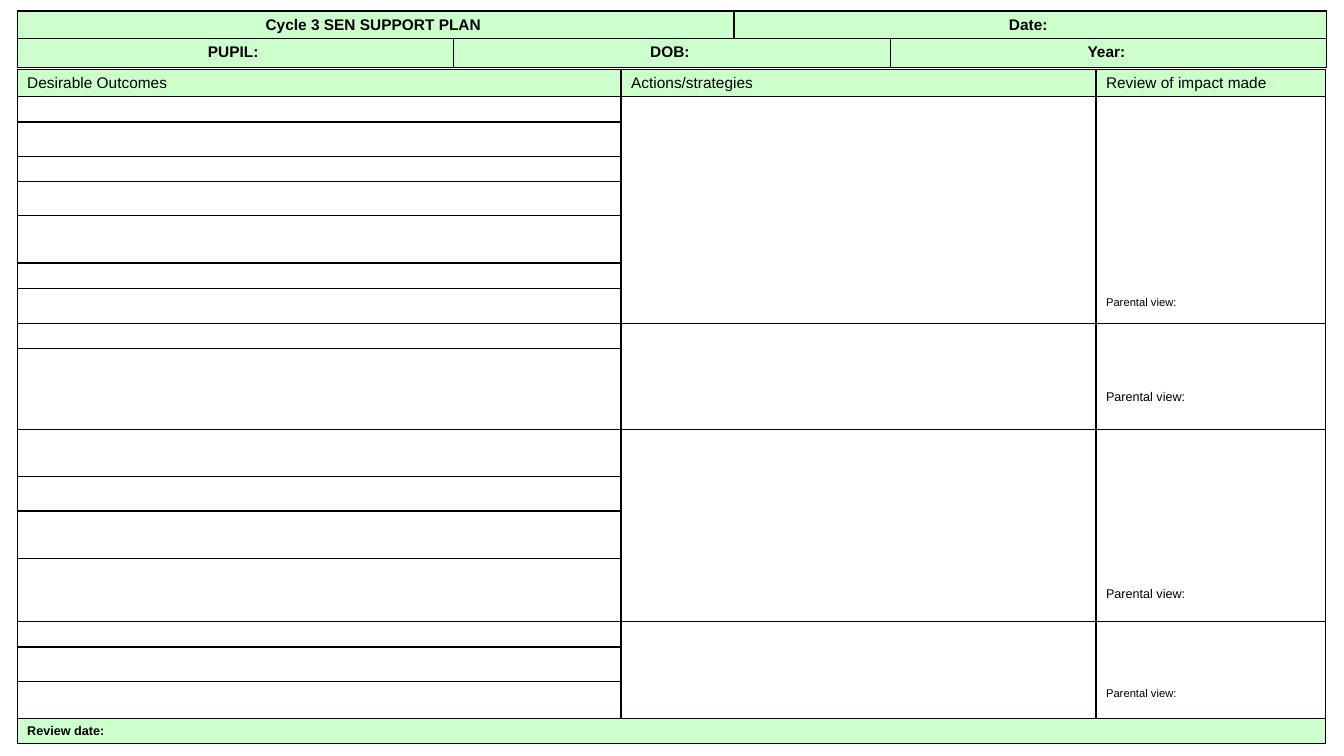
from dataclasses import dataclass

from pptx import Presentation
from pptx import util as u
from pptx.dml.color import RGBColor
from pptx.enum import text
from pptx.oxml import parse_xml
from pptx.oxml.ns import nsdecls
from pptx.slide import Slide
from pptx.table import Table, _Cell

GREEN, WHITE, BLACK = "CCFFCC", "FFFFFF", "000000"
LEFT = 0.17


@dataclass
class Label:
    row: int
    col: int
    words: str
    size: float = 11
    bold: bool = False
    centred: bool = False
    rows: int = 1
    cols: int = 1
    fill: str = GREEN
    gap_below: float | None = None  # inches from the cell's bottom edge


@dataclass
class Goal:
    """Consecutive outcome rows that share one actions cell and one review cell."""
    rows: int
    view_size: float
    gap_below: float


def colour(value: str) -> RGBColor:
    return RGBColor.from_string(value)


def style_cell(cell: _Cell) -> None:
    """Black borders, white fill and small type while the cell is empty."""
    properties = cell._tc.get_or_add_tcPr()
    for side in "LRTB":
        properties.append(parse_xml(
            f'<a:ln{side} {nsdecls("a")} w="{u.Pt(1)}"><a:solidFill>'
            f'<a:srgbClr val="{BLACK}"/></a:solidFill></a:ln{side}>'))
    cell.fill.solid()
    cell.fill.fore_color.rgb = colour(WHITE)
    cell.text_frame.paragraphs[0]._p.append(
        parse_xml(f'<a:endParaRPr {nsdecls("a")} sz="800"/>'))


def add_grid(slide: Slide, top: float, widths: list[float], heights: list[float]) -> Table:
    grid = slide.shapes.add_table(
        len(heights), len(widths), u.Inches(LEFT), u.Inches(top),
        u.Inches(sum(widths)), u.Inches(sum(heights))).table
    grid.first_row = grid.horz_banding = False
    for column, width in zip(grid.columns, widths):
        column.width = u.Inches(width)
    for row, height in zip(grid.rows, heights):
        row.height = u.Inches(height)
    for cell in grid.iter_cells():
        style_cell(cell)
    return grid


def merge(grid: Table, row: int, col: int, rows: int, cols: int) -> _Cell:
    cell = grid.cell(row, col)
    if rows * cols > 1:
        cell.merge(grid.cell(row + rows - 1, col + cols - 1))
    return cell


def add_label(grid: Table, label: Label) -> None:
    cell = merge(grid, label.row, label.col, label.rows, label.cols)
    cell.fill.fore_color.rgb = colour(label.fill)
    if label.gap_below is not None:
        cell.vertical_anchor = text.MSO_ANCHOR.BOTTOM
        cell.margin_bottom = u.Inches(label.gap_below)
    paragraph = cell.text_frame.paragraphs[0]
    paragraph.add_run().text = label.words
    if label.centred:
        paragraph.alignment = text.PP_ALIGN.CENTER
    font = paragraph.font
    font.name, font.size, font.bold = "Arial", u.Pt(label.size), label.bold
    font.color.rgb = colour(BLACK)


PUPIL_DETAILS = [
    Label(0, 0, "Cycle 3 SEN SUPPORT PLAN ", bold=True, centred=True, cols=2),
    Label(0, 2, "Date: ", bold=True, centred=True, cols=2),
    Label(1, 0, "PUPIL: ", bold=True, centred=True),
    Label(1, 1, "DOB: ", bold=True, centred=True, cols=2),
    Label(1, 3, "Year: ", bold=True, centred=True),
]
HEADINGS = ["Desirable Outcomes", "Actions/strategies", "Review of impact made"]
GOALS = [Goal(7, 8, 0.15), Goal(2, 9, 0.25), Goal(4, 9, 0.2), Goal(3, 8, 0.19)]
PLAN_HEIGHTS = [0.27, 0.25, 0.34, 0.25, 0.34, 0.47, 0.25, 0.35, 0.25,
                0.8, 0.47, 0.34, 0.47, 0.63, 0.25, 0.34, 0.37, 0.25]


def main() -> None:
    deck = Presentation()
    deck.slide_width, deck.slide_height = u.Inches(13.33), u.Inches(7.5)
    slide = deck.slides.add_slide(deck.slide_layouts[6])

    details = add_grid(slide, 0.11, [4.33, 2.78, 1.55, 4.33], [0.27, 0.29])
    for label in PUPIL_DETAILS:
        add_label(details, label)

    plan = add_grid(slide, 0.69, [5.99, 4.71, 2.28], PLAN_HEIGHTS)
    for col, heading in enumerate(HEADINGS):
        add_label(plan, Label(0, col, heading))
    row = 1
    for goal in GOALS:
        merge(plan, row, 1, goal.rows, 1)
        add_label(plan, Label(row, 2, "Parental view:", goal.view_size, rows=goal.rows,
                              fill=WHITE, gap_below=goal.gap_below))
        row += goal.rows
    add_label(plan, Label(row, 0, "Review date:", 9, bold=True, cols=3))

    deck.save("out.pptx")


if __name__ == "__main__":
    main()
